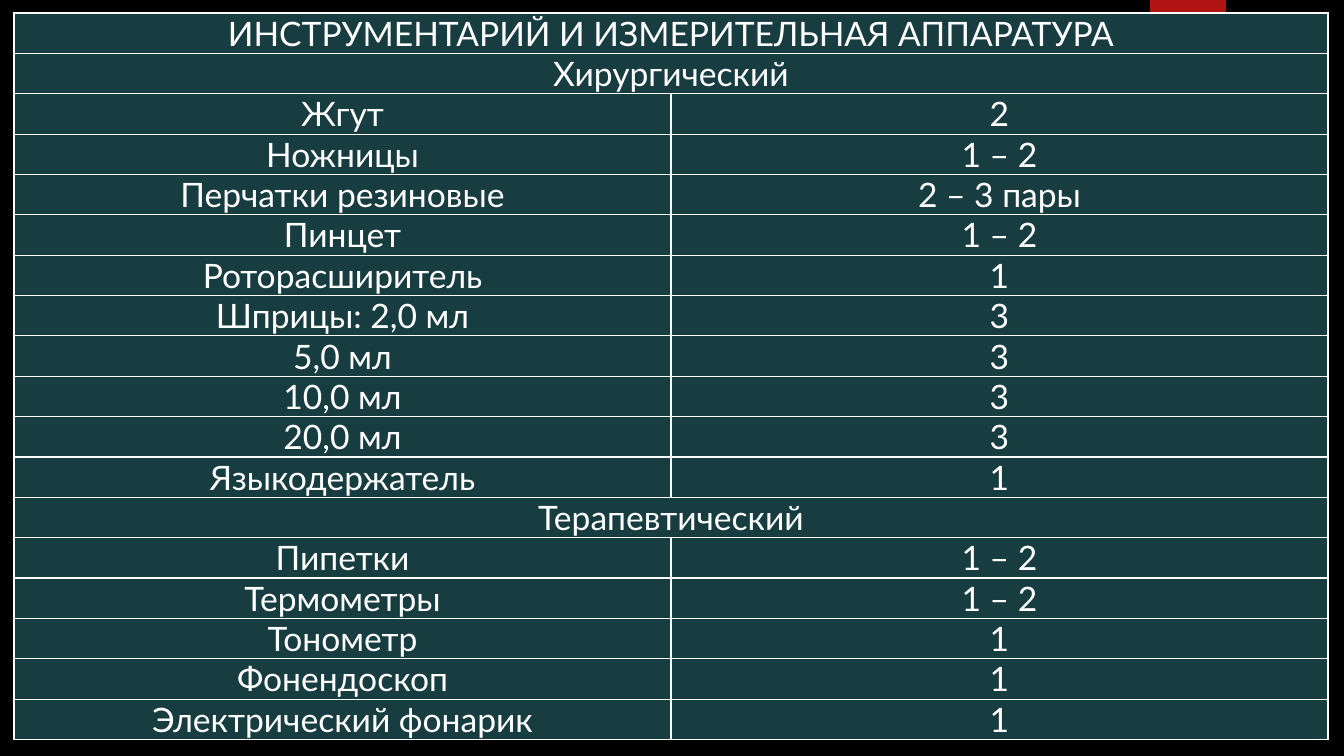
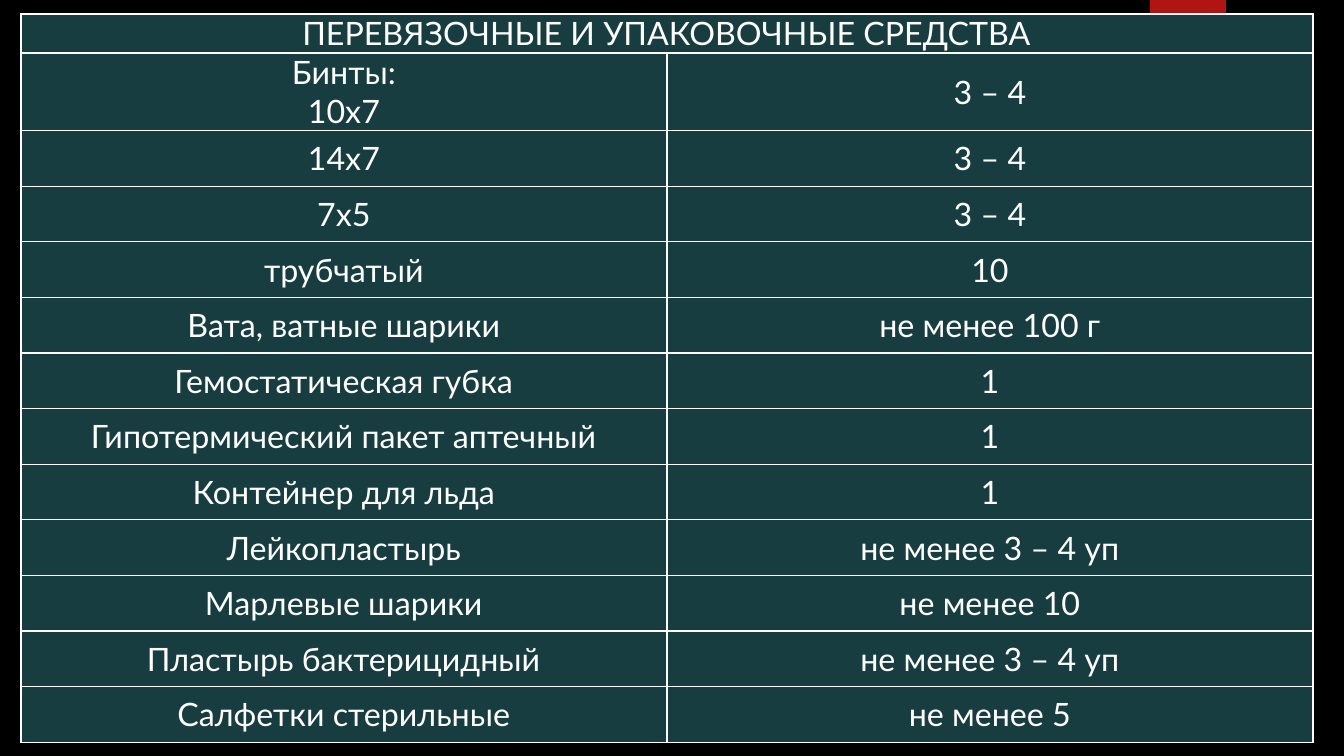
from dataclasses import dataclass

from lxml.etree import SubElement
from pptx import Presentation
from pptx.dml.color import RGBColor
from pptx.enum.shapes import MSO_SHAPE
from pptx.enum.text import MSO_ANCHOR, PP_ALIGN
from pptx.oxml import parse_xml
from pptx.oxml.ns import nsdecls, qn
from pptx.util import Emu, Pt

SLIDE_WIDTH, SLIDE_HEIGHT = 1344, 756
EMU_PER_PX = 12192000 / SLIDE_WIDTH


def px(length):
    return Emu(round(length * EMU_PER_PX))


@dataclass(frozen=True)
class Theme:
    background: str = "000000"
    accent: str = "B01513"
    cell: str = "173D40"
    text: str = "FFFFFF"
    border: str = "FFFFFF"
    font: str = "Lato"
    instruments_size: int = 24
    dressings_size: int = 23
    border_width: int = 1


class Deck:
    def __init__(self, theme):
        self.theme = theme
        self.presentation = Presentation()
        self.presentation.slide_width = px(SLIDE_WIDTH)
        self.presentation.slide_height = px(SLIDE_HEIGHT)
        self.slide = None

    def paint(self, fill, colour):
        fill.solid()
        fill.fore_color.rgb = RGBColor.from_string(colour)

    def add_slide(self):
        blank = self.presentation.slide_layouts[6]
        self.slide = self.presentation.slides.add_slide(blank)
        self.paint(self.slide.background.fill, self.theme.background)
        self.add_tab()

    def add_tab(self):
        tab = self.slide.shapes.add_shape(
            MSO_SHAPE.RECTANGLE, px(1150), px(0), px(76), px(126))
        tab.shadow.inherit = False
        self.paint(tab.fill, self.theme.accent)
        tab.line.fill.background()

    def add_kit(self, left, top, column_width, height, rows, size, fixed_heights=()):
        frame = self.slide.shapes.add_table(
            len(rows), 2, px(left), px(top), px(2 * column_width), px(height))
        table = frame.table
        table.first_row = table.horz_banding = False
        shared = (height - sum(fixed_heights)) / (len(rows) - len(fixed_heights))
        for index, row in enumerate(rows):
            fixed = index < len(fixed_heights)
            table.rows[index].height = px(fixed_heights[index] if fixed else shared)
            for column in range(2):
                self.style_cell(table.cell(index, column))
            if len(row) == 1:
                table.cell(index, 0).merge(table.cell(index, 1))
            for column, text in enumerate(row):
                self.write_cell(table.cell(index, column), text, size)

    def style_cell(self, cell):
        self.paint(cell.fill, self.theme.cell)
        cell.vertical_anchor = MSO_ANCHOR.MIDDLE
        cell.margin_left = cell.margin_right = px(1)
        cell.margin_top = cell.margin_bottom = 0
        properties = cell._tc.get_or_add_tcPr()
        for position, side in enumerate(("lnL", "lnR", "lnT", "lnB")):
            border = parse_xml(f'<a:{side} {nsdecls("a")}/>')
            border.set("w", str(Pt(self.theme.border_width)))
            fill = SubElement(border, qn("a:solidFill"))
            SubElement(fill, qn("a:srgbClr"), val=self.theme.border)
            properties.insert(position, border)

    def write_cell(self, cell, text, size):
        cell.text = text
        for paragraph in cell.text_frame.paragraphs:
            paragraph.alignment = PP_ALIGN.CENTER
            paragraph.font.name = self.theme.font
            paragraph.font.size = Pt(size)
            paragraph.font.bold = False
            paragraph.font.color.rgb = RGBColor.from_string(self.theme.text)


INSTRUMENTS = (
    ("ИНСТРУМЕНТАРИЙ И ИЗМЕРИТЕЛЬНАЯ АППАРАТУРА",),
    ("Хирургический",),
    ("Жгут", "2"),
    ("Ножницы", "1 – 2"),
    ("Перчатки резиновые", "2 – 3 пары"),
    ("Пинцет", "1 – 2"),
    ("Роторасширитель", "1"),
    ("Шприцы: 2,0 мл", "3"),
    ("5,0 мл", "3"),
    ("10,0 мл", "3"),
    ("20,0 мл", "3"),
    ("Языкодержатель", "1"),
    ("Терапевтический",),
    ("Пипетки", "1 – 2"),
    ("Термометры", "1 – 2"),
    ("Тонометр", "1"),
    ("Фонендоскоп", "1"),
    ("Электрический фонарик", "1"),
)

DRESSINGS = (
    ("ПЕРЕВЯЗОЧНЫЕ И УПАКОВОЧНЫЕ СРЕДСТВА",),
    ("Бинты:\n10x7", "3 – 4"),
    ("14x7", "3 – 4"),
    ("7x5", "3 – 4"),
    ("трубчатый", "10"),
    ("Вата, ватные шарики", "не менее 100 г"),
    ("Гемостатическая губка", "1"),
    ("Гипотермический пакет аптечный", "1"),
    ("Контейнер для льда", "1"),
    ("Лейкопластырь", "не менее 3 – 4 уп"),
    ("Марлевые шарики", "не менее 10"),
    ("Пластырь бактерицидный", "не менее 3 – 4 уп"),
    ("Салфетки стерильные", "не менее 5"),
)


def main():
    theme = Theme()
    deck = Deck(theme)
    deck.add_slide()
    deck.add_kit(14, 13, 657, 727, INSTRUMENTS, theme.instruments_size)
    deck.add_slide()
    deck.add_kit(21, 14, 646, 728, DRESSINGS, theme.dressings_size, (39, 77))
    deck.presentation.save("out.pptx")


if __name__ == "__main__":
    main()
